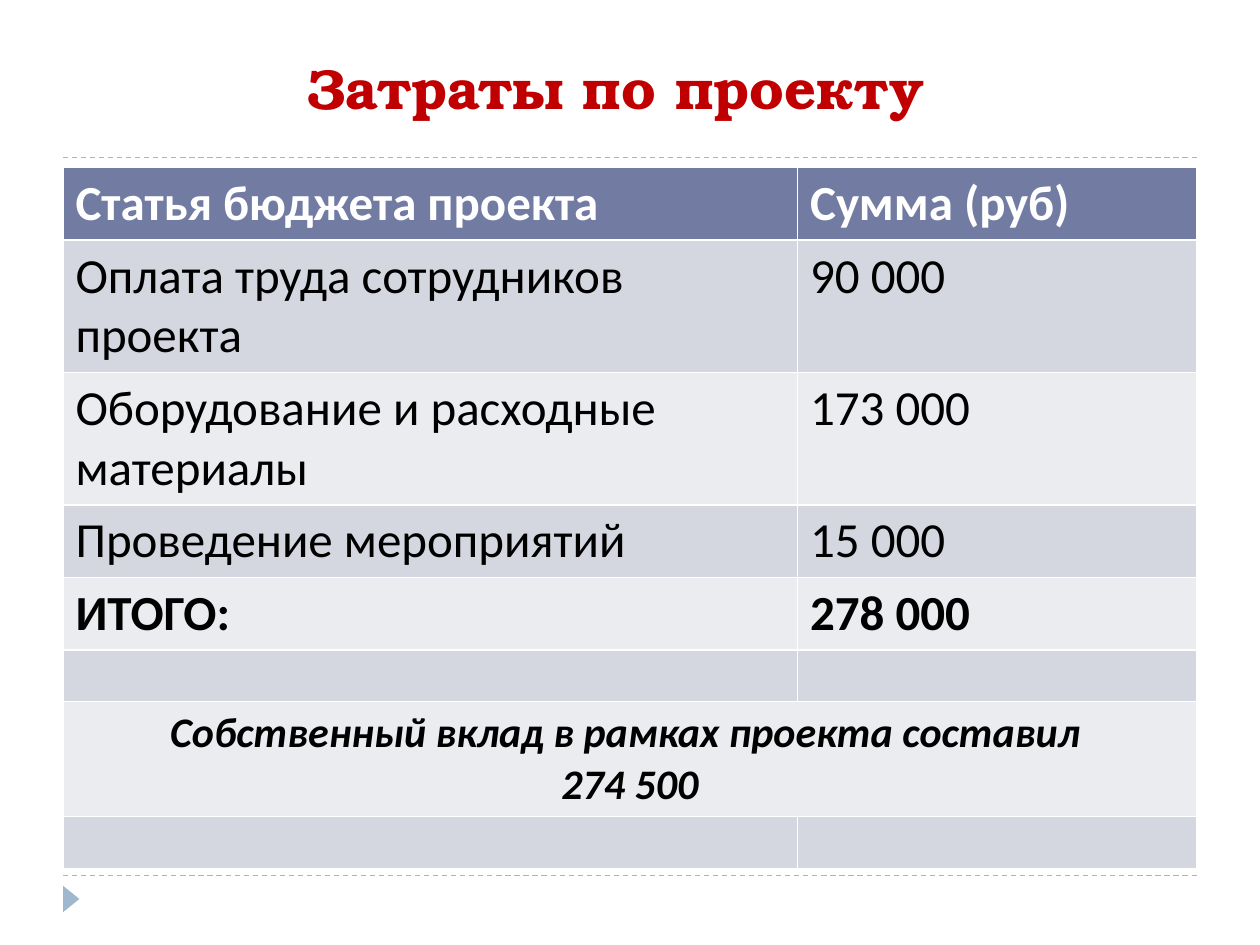
import pptx
import pptx.util
import pptx.dml.color
import pptx.enum.dml
import pptx.enum.shapes
import pptx.enum.text
import pptx.oxml.ns
import lxml.etree

Inches, Pt = pptx.util.Inches, pptx.util.Pt
RGB = pptx.dml.color.RGBColor
ALIGN = pptx.enum.text.PP_ALIGN

RED = RGB(0xC0, 0x00, 0x00)
WHITE = RGB(0xFF, 0xFF, 0xFF)
BLACK = RGB(0x00, 0x00, 0x00)
HEAD = RGB(0x72, 0x7C, 0xA3)
BANDS = (RGB(0xEB, 0xEC, 0xF0), RGB(0xD5, 0xD7, 0xE0))
RULE = RGB(0x9F, 0xB8, 0xCD)

TITLE = "Затраты по проекту"
ROWS = [
    ("Статья бюджета проекта", "Сумма (руб)"),
    ("Оплата труда сотрудников проекта", "90 000"),
    ("Оборудование и расходные материалы", "173 000"),
    ("Проведение мероприятий", "15 000"),
    ("ИТОГО:", "278 000"),
    ("", ""),
    ("Собственный вклад в рамках проекта составил \n274 500", ""),
    ("", ""),
]
TOTAL, NOTE = 4, 6
LEFT, WIDTH = 0.5, 9
COLS = (5.83, 3.17)
ROW = 0.41


def add_rule(slide, y):
    rule = slide.shapes.add_connector(
        pptx.enum.shapes.MSO_CONNECTOR.STRAIGHT,
        Inches(LEFT), Inches(y), Inches(LEFT + WIDTH), Inches(y))
    rule.line.color.rgb = RULE
    rule.line.width = Pt(0.75)
    rule.line.dash_style = pptx.enum.dml.MSO_LINE.DASH
    props = rule._element.spPr
    lxml.etree.SubElement(props, pptx.oxml.ns.qn("a:effectLst"))


def add_mark(slide):
    mark = slide.shapes.add_shape(
        pptx.enum.shapes.MSO_SHAPE.ISOSCELES_TRIANGLE,
        Inches(0.46), Inches(7.07), Inches(0.21), Inches(0.13))
    mark.rotation = 90
    mark.shadow.inherit = False
    mark.fill.solid()
    mark.fill.fore_color.rgb = RULE
    mark.line.fill.background()


def set_title(slide):
    title = slide.shapes.title
    title.left, title.top = Inches(0.39), Inches(0.23)
    title.width, title.height = Inches(WIDTH), Inches(0.78)
    frame = title.text_frame
    frame.text = TITLE
    frame.vertical_anchor = pptx.enum.text.MSO_ANCHOR.BOTTOM
    para = frame.paragraphs[0]
    para.alignment = ALIGN.CENTER
    para.font.name = "TeX Gyre Bonum"
    para.font.size = Pt(32)
    para.font.bold = True
    para.font.color.rgb = RED


def fill_cell(cell, text, row):
    cell.fill.solid()
    cell.fill.fore_color.rgb = BANDS[row % 2] if row else HEAD
    if not text:
        return
    cell.text = text
    for para in cell.text_frame.paragraphs:
        font = para.font
        font.name = "Calibri"
        font.size = Pt(24 if row == NOTE else 28)
        font.bold = row in (0, TOTAL, NOTE)
        font.italic = row == NOTE
        font.color.rgb = BLACK if row else WHITE
        if row == NOTE:
            para.alignment = ALIGN.CENTER


def add_costs(slide):
    table = slide.shapes.add_table(
        len(ROWS), len(COLS), Inches(LEFT), Inches(1.33),
        Inches(WIDTH), Inches(ROW * len(ROWS))).table
    for col, width in zip(table.columns, COLS):
        col.width = Inches(width)
    table.cell(NOTE, 0).merge(table.cell(NOTE, 1))
    for r, texts in enumerate(ROWS):
        for c, text in enumerate(texts):
            fill_cell(table.cell(r, c), text, r)


def main():
    deck = pptx.Presentation()
    deck.slide_width, deck.slide_height = Inches(10), Inches(7.5)
    slide = deck.slides.add_slide(deck.slide_layouts[5])
    for y in (6.95, 1.25):
        add_rule(slide, y)
    add_mark(slide)
    set_title(slide)
    add_costs(slide)
    deck.save("out.pptx")


if __name__ == "__main__":
    main()
